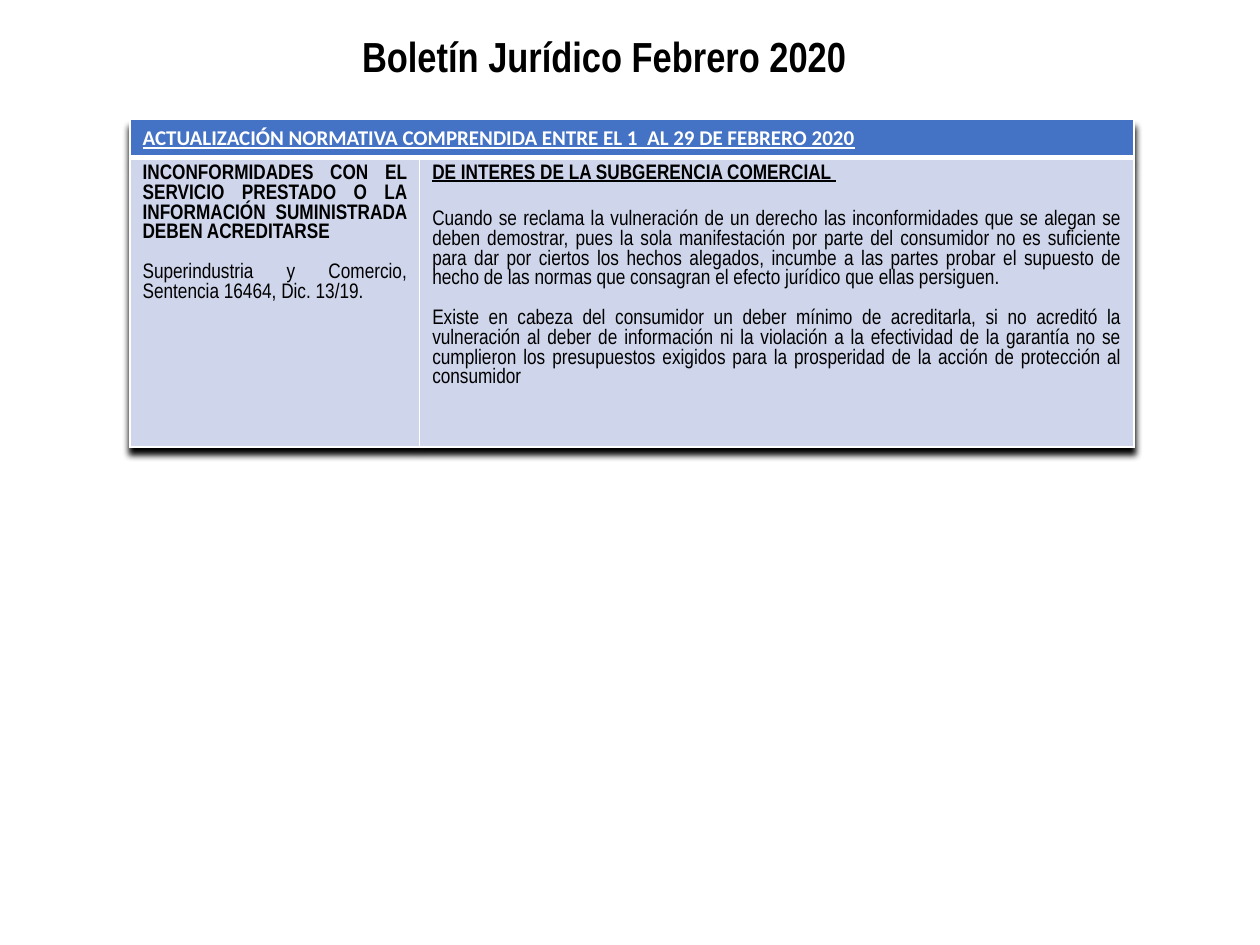
from dataclasses import dataclass

from lxml.etree import SubElement as Sub, Element as Elem
from pptx import Presentation
from pptx.dml.color import RGBColor as Rgb
from pptx.enum.text import MSO_ANCHOR as Anchor, MSO_AUTO_SIZE as Auto, PP_ALIGN as Align
from pptx.oxml.ns import qn
from pptx.util import Cm, Pt


@dataclass(frozen=True)
class Theme:
    black: str = "000000"
    white: str = "FFFFFF"
    blue: str = "4472C4"
    pale: str = "CFD5EA"
    narrow: str = "Arial Narrow"
    sans: str = "Calibri"
    big: float = 24
    body: float = 12
    pitch: float = 11.3  # line pitch of the body text


T = Theme()


@dataclass(frozen=True)
class Para:
    text: str
    bold: bool = False
    under: bool = False
    gap: float = 0  # space before


HEAD = Para("ACTUALIZACIÓN NORMATIVA COMPRENDIDA ENTRE EL 1  AL 29 DE FEBRERO 2020", True, True)
CASE = [
    Para("INCONFORMIDADES CON EL SERVICIO PRESTADO O LA INFORMACIÓN SUMINISTRADA "
         "DEBEN ACREDITARSE ", True),
    Para("Superindustria y Comercio, Sentencia 16464, Dic. 13/19.", gap=T.pitch),
]
NOTES = [
    Para("DE INTERES DE LA SUBGERENCIA COMERCIAL ", True, True),
    Para("Cuando se reclama la vulneración de un derecho las inconformidades que se alegan se "
         "deben demostrar, pues la sola manifestación por parte del consumidor no es suficiente "
         "para dar por ciertos los hechos alegados, incumbe a las partes probar el supuesto de "
         "hecho de las normas que consagran el efecto jurídico que ellas persiguen. ", gap=15),
    Para("Existe en cabeza del consumidor un deber mínimo de acreditarla, si no acreditó la "
         "vulneración al deber de información ni la violación a la efectividad de la garantía "
         "no se cumplieron los presupuestos exigidos para la prosperidad de la acción de "
         "protección al consumidor", gap=T.pitch),
]


def style(para, face, size, color, bold=False, under=False):
    font = para.font
    font.name, font.size = face, Pt(size)
    font.bold, font.underline = bold, under
    font.color.rgb = Rgb.from_string(color)


def add_title(slide, text):
    box = slide.shapes.title
    box.left, box.top, box.width, box.height = Cm(1.12), Cm(0.48), Cm(22.12), Cm(1.28)
    frame = box.text_frame
    frame.text = text
    frame.word_wrap = True
    frame.auto_size = Auto.SHAPE_TO_FIT_TEXT
    frame.vertical_anchor = Anchor.MIDDLE
    para = frame.paragraphs[0]
    para.alignment = Align.CENTER
    para.line_spacing = 1.0
    style(para, T.narrow, T.big, T.black, bold=True)


def add_color(node, color):
    Sub(Sub(node, qn("a:solidFill")), qn("a:srgbClr"), val=color)


def edge(cell, top=1, base=1):
    """Draw white borders; widths are in points."""
    props = cell._tc.get_or_add_tcPr()
    sides = {"L": 1, "R": 1, "T": top, "B": base}
    for spot, (side, width) in enumerate(sides.items()):
        line = Elem(qn(f"a:ln{side}"), w=str(Pt(width)))
        add_color(line, T.white)
        props.insert(spot, line)


def fill_cell(cell, paras, face, color, back, pitch=None):
    cell.fill.solid()
    cell.fill.fore_color.rgb = Rgb.from_string(back)
    frame = cell.text_frame
    for num, item in enumerate(paras):
        para = frame.add_paragraph() if num else frame.paragraphs[0]
        para.text = item.text
        para.alignment = Align.JUSTIFY
        if pitch:
            para.line_spacing = Pt(pitch)
        if item.gap:
            para.space_before = Pt(item.gap)
        style(para, face, T.body, color, item.bold, item.under)


def add_shade(table):
    """Cast a soft black shadow below the table."""
    fx = Elem(qn("a:effectLst"))
    shade = Sub(fx, qn("a:outerShdw"), blurRad=str(Pt(4)), dist=str(Pt(4)),
                dir="5400000", algn="t", rotWithShape="0")
    Sub(shade, qn("a:srgbClr"), val=T.black)
    table._tbl.tblPr.insert(0, fx)


def add_grid(slide):
    cols, rows = (5.84, 14.4), (0.77, 5.83)
    table = slide.shapes.add_table(2, 2, Cm(2.62), Cm(2.41), Cm(sum(cols)), Cm(sum(rows))).table
    for col, width in zip(table.columns, cols):
        col.width = Cm(width)
    for row, height in zip(table.rows, rows):
        row.height = Cm(height)
    add_shade(table)

    # Heading across both columns
    head = table.cell(0, 0)
    head.merge(table.cell(0, 1))
    fill_cell(head, [HEAD], T.sans, T.white, T.blue)
    edge(head, base=3)

    # Ruling and its summary
    for num, paras in enumerate((CASE, NOTES)):
        cell = table.cell(1, num)
        fill_cell(cell, paras, T.narrow, T.black, T.pale, T.pitch)
        edge(cell, top=3)


def main():
    deck = Presentation()
    deck.slide_width, deck.slide_height = Cm(25.4), Cm(19.05)
    slide = deck.slides.add_slide(deck.slide_layouts[5])
    add_title(slide, "Boletín Jurídico Febrero 2020")
    add_grid(slide)
    deck.save("out.pptx")


if __name__ == "__main__":
    main()
